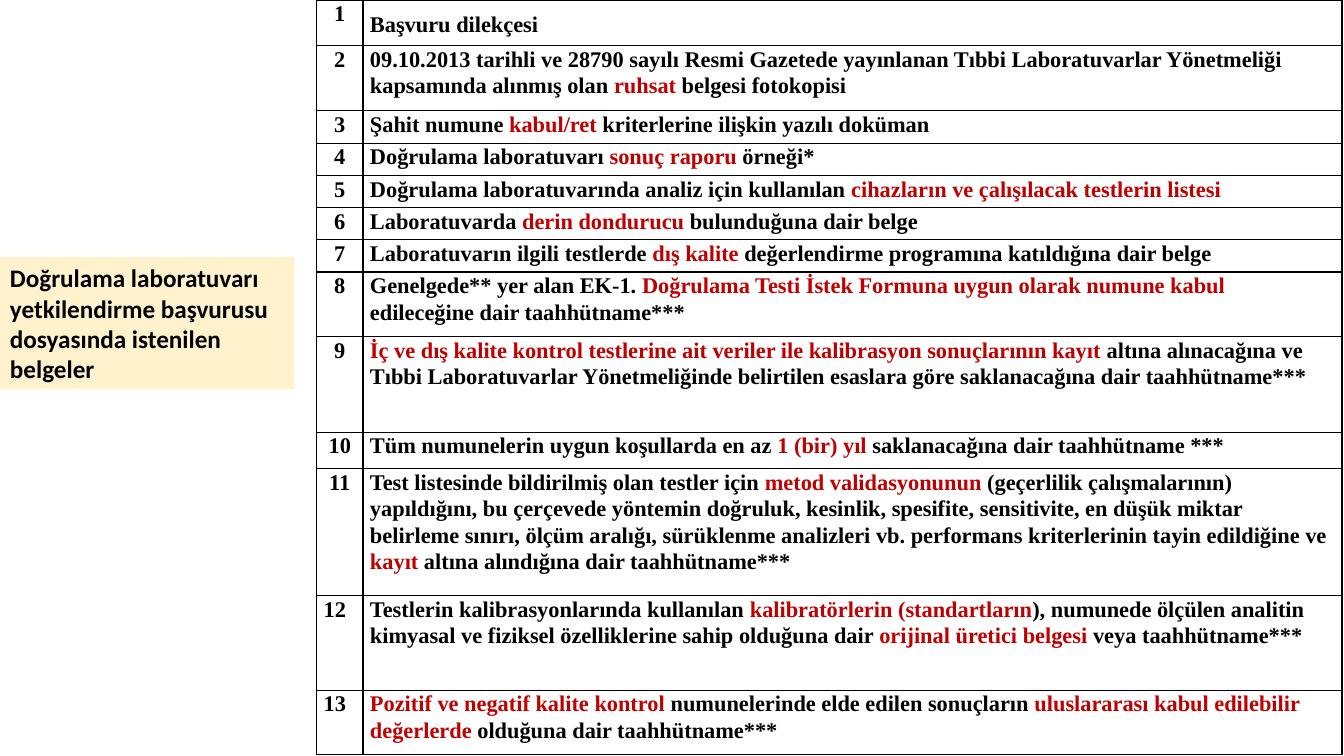
from lxml import etree
from pptx import Presentation
from pptx.dml.color import RGBColor
from pptx.enum.shapes import MSO_SHAPE
from pptx.enum.text import MSO_ANCHOR, PP_ALIGN
from pptx.oxml.ns import qn
from pptx.util import Inches, Pt

RECTANGLE = MSO_SHAPE.RECTANGLE
MIDDLE = MSO_ANCHOR.MIDDLE
LEFT, CENTER, JUSTIFY = PP_ALIGN.LEFT, PP_ALIGN.CENTER, PP_ALIGN.JUSTIFY
BLACK = RGBColor(0x00, 0x00, 0x00)
RED = RGBColor(0xC0, 0x00, 0x00)
WHITE = RGBColor(0xFF, 0xFF, 0xFF)
CREAM = RGBColor(0xFF, 0xF2, 0xCC)

TITLE = "Doğrulama laboratuvarı yetkilendirme başvurusu dosyasında istenilen belgeler"
COLUMN_WIDTHS = [0.46, 9.71]
CELL_MARGINS = {"margin_left": 0.07, "margin_right": 0.07, "margin_top": 0, "margin_bottom": 0}

# Row height and text; the parts between bars are red
DOCUMENTS = [
    (0.45, "Başvuru dilekçesi"),
    (0.65, "09.10.2013 tarihli ve 28790 sayılı Resmi Gazetede yayınlanan Tıbbi Laboratuvarlar "
           "Yönetmeliği kapsamında alınmış olan |ruhsat| belgesi fotokopisi"),
    (0.32, "Şahit numune |kabul/ret |kriterlerine ilişkin yazılı doküman"),
    (0.32, "Doğrulama laboratuvarı |sonuç raporu |örneği*"),
    (0.32, "Doğrulama laboratuvarında analiz için kullanılan "
           "|cihazların ve çalışılacak testlerin listesi"),
    (0.32, "Laboratuvarda |derin dondurucu |bulunduğuna dair belge"),
    (0.32, "Laboratuvarın ilgili testlerde |dış kalite "
           "|değerlendirme programına katıldığına dair belge"),
    (0.64, "Genelgede** yer alan EK-1. |Doğrulama Testi İstek Formuna uygun olarak numune kabul "
           "|edileceğine dair taahhütname***"),
    (0.95, "|İç ve dış kalite kontrol testlerine ait veriler ile kalibrasyon sonuçlarının kayıt "
           "|altına alınacağına ve Tıbbi Laboratuvarlar Yönetmeliğinde belirtilen esaslara göre "
           "saklanacağına dair taahhütname***"),
    (0.36, "Tüm numunelerin uygun koşullarda en az |1 (bir) yıl |saklanacağına dair taahhütname ***"),
    (1.26, "Test listesinde bildirilmiş olan testler için |metod validasyonunun "
           "|(geçerlilik çalışmalarının) yapıldığını, bu çerçevede yöntemin doğruluk, kesinlik, "
           "spesifite, sensitivite, en düşük miktar belirleme sınırı, ölçüm aralığı, sürüklenme "
           "analizleri vb. performans kriterlerinin tayin edildiğine ve |kayıt"
           "| altına alındığına dair taahhütname***"),
    (0.94, "Testlerin kalibrasyonlarında kullanılan |kalibratörlerin (standartların"
           "|), numunede ölçülen analitin kimyasal ve fiziksel özelliklerine sahip olduğuna dair "
           "|orijinal üretici belgesi |veya taahhütname***"),
    (0.64, "|Pozitif ve negatif kalite kontrol |numunelerinde elde edilen sonuçların "
           "|uluslararası kabul edilebilir değerlerde| olduğuna dair taahhütname***"),
]


def add_run(p, text, font, size, color):
    r = p.add_run()
    r.text = text
    for name, value in {"name": font, "size": Pt(size), "bold": True}.items():
        setattr(r.font, name, value)
    r.font.color.rgb = color


def fill_cell(cell, text, align, spacing):
    """Write text with alternating black and red parts, then add borders and fill."""
    for name, value in CELL_MARGINS.items():
        setattr(cell, name, Inches(value))
    p = cell.text_frame.paragraphs[0]
    p.alignment = align
    p.line_spacing = spacing
    for i, part in enumerate(text.split("|")):
        if part:
            add_run(p, part, "Times New Roman", 16, RED if i % 2 else BLACK)
    tc_pr = cell._tc.get_or_add_tcPr()
    for side in ("a:lnL", "a:lnR", "a:lnT", "a:lnB"):
        ln = etree.SubElement(tc_pr, qn(side), w=str(Pt(1)))
        solid = etree.SubElement(ln, qn("a:solidFill"))
        etree.SubElement(solid, qn("a:srgbClr"), val=str(BLACK))
    cell.fill.solid()
    cell.fill.fore_color.rgb = WHITE


prs = Presentation()
prs.slide_width, prs.slide_height = Inches(13.33), Inches(7.5)
s = prs.slides.add_slide(prs.slide_layouts[6])

# Table of required documents
table = s.shapes.add_table(
    len(DOCUMENTS), len(COLUMN_WIDTHS), Inches(3.14), Inches(0),
    Inches(sum(COLUMN_WIDTHS)), Inches(sum(height for height, _ in DOCUMENTS))).table
table.first_row = table.horz_banding = False
for column, width in zip(table.columns, COLUMN_WIDTHS):
    column.width = Inches(width)
for i, (height, text) in enumerate(DOCUMENTS):
    table.rows[i].height = Inches(height)
    fill_cell(table.cell(i, 0), str(i + 1), CENTER if i < 11 else LEFT, 1.07)
    fill_cell(table.cell(i, 1), text, LEFT if i else JUSTIFY, 1.07 if i else 1.5)

# Title box
sp = s.shapes.add_shape(RECTANGLE, Inches(0), Inches(2.55), Inches(2.92), Inches(1.31))
sp.shadow.inherit = False
sp.fill.solid()
sp.fill.fore_color.rgb = CREAM
sp.line.fill.background()
tf = sp.text_frame
tf.word_wrap = True
tf.vertical_anchor = MIDDLE
p = tf.paragraphs[0]
p.alignment = LEFT
add_run(p, TITLE, "Calibri", 18, BLACK)

prs.save("out.pptx")
